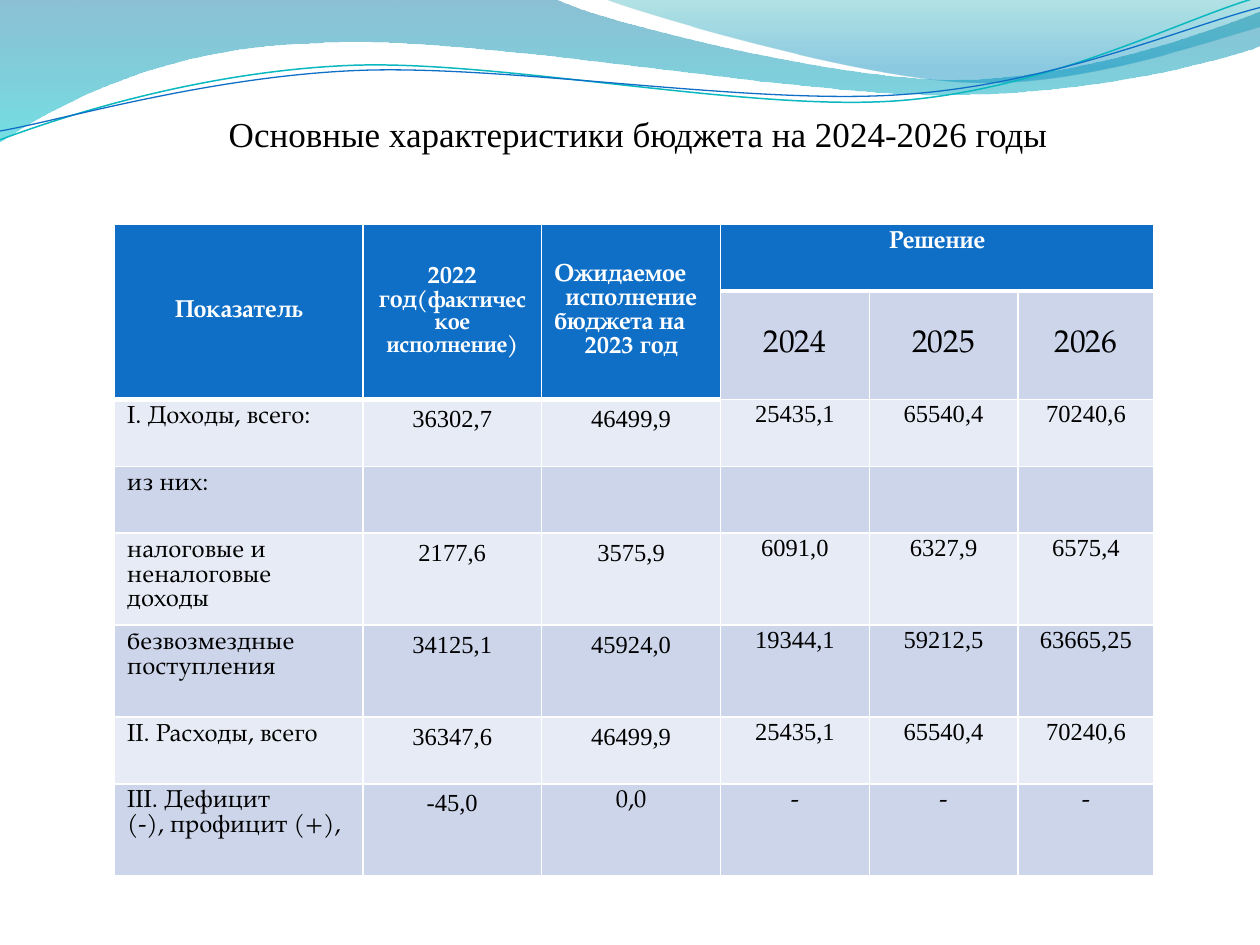
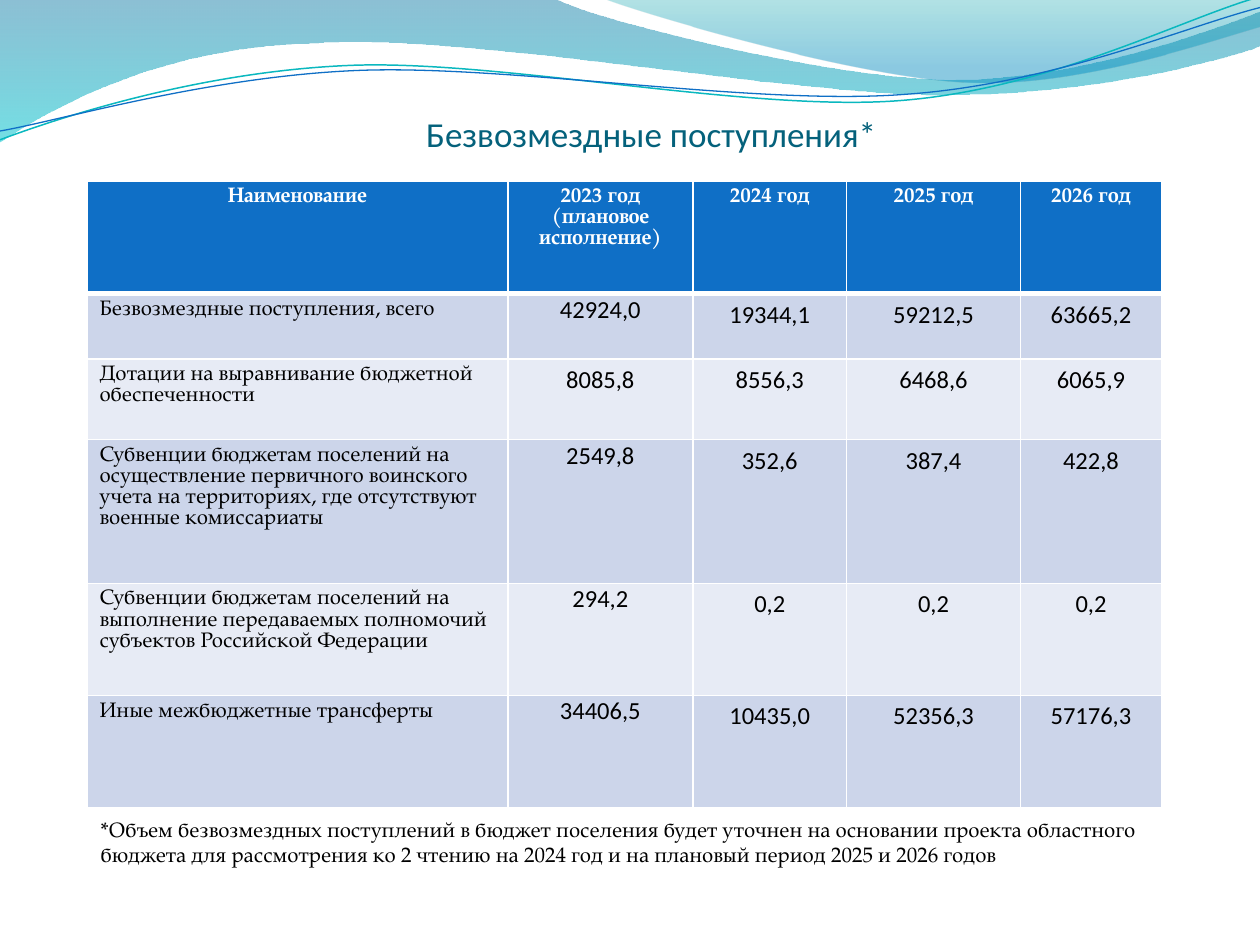
from lxml import etree
from pptx import Presentation
from pptx import util as u
from pptx.dml.color import RGBColor
from pptx.enum import text
from pptx.oxml import ns

PX = 9144  # EMU in one px, 100 px to the inch
SERIF, TIMES, SANS = "TeX Gyre Pagella", "Times New Roman", "Calibri"
BLACK, WHITE, BLUE, TEAL = "000000", "FFFFFF", "0F6FC6", "04617B"
DARK_BAND, LIGHT_BAND = "CCD5EA", "E7EBF5"
LEFT, CENTER = text.PP_ALIGN.LEFT, text.PP_ALIGN.CENTER
TOP, MIDDLE, BOTTOM = (text.MSO_ANCHOR.TOP, text.MSO_ANCHOR.MIDDLE,
                       text.MSO_ANCHOR.BOTTOM)
TIGHT = (1, 1, 1, 0)


def px(*lengths):
    return [round(length * PX) for length in lengths]


def rgb(color):
    return RGBColor.from_string(color)


# Text
def add_run(paragraph, words, size=14, font=SERIF, color=BLACK, bold=False):
    run = paragraph.add_run()
    run.text = words
    run.font.size = u.Pt(size)
    run.font.name = font
    run.font.bold = bold
    run.font.color.rgb = rgb(color)


def write(frame, words, align=LEFT, **run_format):
    for index, line in enumerate(words.split("\n")):
        paragraph = frame.add_paragraph() if index else frame.paragraphs[0]
        paragraph.alignment = align
        paragraph.line_spacing = 1.0
        add_run(paragraph, line, **run_format)


def set_margins(target, margins):
    (target.margin_left, target.margin_top,
     target.margin_right, target.margin_bottom) = px(*margins)


def place_title(slide, box, words, **run_format):
    title = slide.shapes.title
    title.left, title.top, title.width, title.height = px(*box)
    frame = title.text_frame
    frame.auto_size = text.MSO_AUTO_SIZE.NONE
    frame.vertical_anchor = BOTTOM
    set_margins(frame, (0, 5, 0, 0))
    write(frame, words, align=CENTER, size=20, **run_format)


# Waves at the top, shared through the layout
def bend(segment, controls, origin):
    """Turn a straight step of an outline into a curve with the same end."""
    curve = etree.Element(ns.qn("a:cubicBezTo"))
    for point in (controls[:2], controls[2:]):
        x, y = (value - start for value, start in zip(px(*point), origin))
        etree.SubElement(curve, ns.qn("a:pt"), x=str(x), y=str(y))
    curve.append(segment[0])
    segment.getparent().replace(segment, curve)


def add_wave(slide, outline, closed):
    """Two numbers make a straight step, six make a curve."""
    start, *steps = outline
    builder = slide.shapes.build_freeform(*px(*start))
    builder.add_line_segments([px(*step[-2:]) for step in steps], close=closed)
    wave = builder.convert_to_shape()
    wave.shadow.inherit = False
    segments = list(wave.element.iter(ns.qn("a:lnTo")))
    for segment, step in zip(segments, steps):
        if len(step) == 6:
            bend(segment, step[:4], (wave.left, wave.top))
    return wave


def add_band(slide, outline, stops):
    band = add_wave(slide, outline, closed=True)
    band.line.fill.background()
    band.fill.gradient()
    band.fill.gradient_angle = 270
    for stop, (position, color, opacity) in zip(band.fill.gradient_stops, stops):
        stop.position = position
        stop.color.rgb = rgb(color)
    for element, stop in zip(band.element.iter(ns.qn("a:srgbClr")), stops):
        etree.SubElement(element, ns.qn("a:alpha"), val=str(stop[2] * 1000))
    return band


def add_strand(slide, outline, color, width):
    strand = add_wave(slide, outline, closed=False)
    strand.fill.background()
    strand.line.color.rgb = rgb(color)
    strand.line.width = u.Pt(width)
    return strand


def decorate_layout(layout, slide):
    """Draw the waves on a slide, then move them to its layout."""
    waves = [
        add_band(slide, [
            (0, 0), (440, -1), (476, 17, 664, 63, 758, 63),
            (853, 63, 958, 26, 1000, 9), (1001, 36),
            (983, 44, 870, 76, 746, 75), (622, 75, 382, 28, 257, 34),
            (129, 36, 46, 83, -1, 113), (0, 0)],
            [(0, "0074A1", 45), (1, "00C6CF", 55)]),
        add_band(slide, [
            (479, -1), (509, 11, 682, 62, 769, 65),
            (856, 69, 961, 32, 1000, 21), (1000, 0), (479, -1)],
            [(0, "00A1A9", 30), (0.8, "008BBF", 45)]),
        add_strand(slide, [
            (0, 111), (48, 93, 158, 57, 277, 52), (395, 47, 593, 89, 713, 80),
            (833, 71, 938, 15, 998, -2)], "0AB8BF", 0.85),
        add_strand(slide, [
            (0, 104), (47, 96, 164, 61, 283, 56), (403, 51, 597, 84, 717, 75),
            (836, 67, 941, 21, 1000, 6)], BLUE, 0.75),
    ]
    for placeholder in list(layout.placeholders)[1:]:
        layout.shapes.element.remove(placeholder.element)
    for wave in waves:
        layout.shapes.element.append(wave.element)


# Tables
def set_borders(cell, bottom):
    properties = cell._tc.get_or_add_tcPr()
    for side, width in (("L", 1), ("R", 1), ("T", 1), ("B", bottom)):
        line = etree.SubElement(properties, ns.qn("a:ln" + side),
                                w=str(u.Pt(width)))
        fill = etree.SubElement(line, ns.qn("a:solidFill"))
        etree.SubElement(fill, ns.qn("a:srgbClr"), val=WHITE)


def add_grid(slide, left, top, widths, heights):
    frame = slide.shapes.add_table(len(heights), len(widths),
                                   *px(left, top, sum(widths), sum(heights)))
    table = frame.table
    table.first_row = table.horz_banding = False
    for column, width in zip(table.columns, px(*widths)):
        column.width = width
    for row, height in zip(table.rows, px(*heights)):
        row.height = height
    return table


def fill_cell(cell, words, fill, anchor=TOP, margins=None, bottom=1,
              **text_format):
    set_borders(cell, bottom)
    cell.fill.solid()
    cell.fill.fore_color.rgb = rgb(fill)
    cell.vertical_anchor = anchor
    if margins:
        set_margins(cell, margins)
    if words:
        write(cell.text_frame, words, **text_format)


HEADER = dict(fill=BLUE, bottom=3, align=CENTER, color=WHITE, bold=True)


def add_budget_table(slide, left, top):
    table = add_grid(slide, left, top, [197, 142, 142, 118, 118, 108],
                     [53, 86, 53, 53, 73, 73, 53, 73])
    # Two-level header
    headings = ["Показатель", "2022 год\nисполнение)",
                "Ожидаемое\nисполнение\nбюджета на\n2023 год"]
    for column, heading in enumerate(headings):
        table.cell(0, column).merge(table.cell(1, column))
        fill_cell(table.cell(0, column), heading, anchor=MIDDLE, **HEADER)
        fill_cell(table.cell(1, column), "", **HEADER)
    actual = table.cell(0, 1).text_frame.paragraphs
    add_run(actual[0], "(фактическое", size=13, color=WHITE, bold=True)
    actual[1].runs[0].font.size = u.Pt(13)
    for paragraph in table.cell(0, 2).text_frame.paragraphs[::2]:
        paragraph.alignment = LEFT

    table.cell(0, 3).merge(table.cell(0, 5))
    for column, year in enumerate(("2024", "2025", "2026"), 3):
        fill_cell(table.cell(0, column), "Решение" if column == 3 else "",
                  **HEADER)
        fill_cell(table.cell(1, column), year, DARK_BAND, anchor=MIDDLE,
                  align=CENTER, size=18)

    # Indicators
    rows = [
        ("I. Доходы, всего:",
         "36302,7", "46499,9", "25435,1", "65540,4", "70240,6"),
        ("из них:", "", "", "", "", ""),
        ("налоговые и\nненалоговые доходы",
         "2177,6", "3575,9", "6091,0", "6327,9", "6575,4"),
        ("безвозмездные\nпоступления",
         "34125,1", "45924,0", "19344,1", "59212,5", "63665,25"),
        ("II. Расходы, всего",
         "36347,6", "46499,9", "25435,1", "65540,4", "70240,6"),
        ("III. Дефицит\n(-), профицит (+),", "-45,0", "0,0", "-", "-", "-"),
    ]
    for row, values in enumerate(rows, 2):
        fill = DARK_BAND if row % 2 else LIGHT_BAND
        is_balance = row == len(rows) + 1
        for column, value in enumerate(values):
            serif = column == 0 or is_balance and column > 1
            fill_cell(table.cell(row, column), value, fill,
                      margins=TIGHT if column > 2 and not serif else None,
                      font=SERIF if serif else TIMES,
                      align=CENTER if column else LEFT)


def add_transfers_table(slide, left, top):
    table = add_grid(slide, left, top, [334, 147, 122, 138, 112],
                     [89, 52, 64, 114, 89, 89])
    headings = ["Наименование", "2023 год (плановое исполнение)",
                "2024 год", "2025 год", "2026 год"]
    for column, heading in enumerate(headings):
        fill_cell(table.cell(0, column), heading, size=12, **HEADER)

    rows = [
        ("Безвозмездные поступления, всего",
         "42924,0", "19344,1", "59212,5", "63665,2"),
        ("Дотации на выравнивание бюджетной обеспеченности",
         "8085,8", "8556,3", "6468,6", "6065,9"),
        ("Субвенции бюджетам поселений на осуществление первичного воинского "
         "учета на территориях, где отсутствуют военные комиссариаты",
         "2549,8", "352,6", "387,4", "422,8"),
        ("Субвенции бюджетам поселений на выполнение передаваемых полномочий "
         "субъектов Российской Федерации", "294,2", "0,2", "0,2", "0,2"),
        ("Иные межбюджетные трансферты",
         "34406,5", "10435,0", "52356,3", "57176,3"),
    ]
    for row, (name, *values) in enumerate(rows, 1):
        fill = DARK_BAND if row % 2 else LIGHT_BAND
        fill_cell(table.cell(row, 0), name, fill, size=12)
        for column, value in enumerate(values, 1):
            tight = column == 1 and row != 2
            fill_cell(table.cell(row, column), value, fill, font=SANS,
                      margins=TIGHT if tight else None, align=CENTER)


def add_footnote(slide, box):
    frame = slide.shapes.add_textbox(*px(*box)).text_frame
    frame.word_wrap = True
    write(frame, "*Объем безвозмездных поступлений в бюджет поселения будет "
          "уточнен на основании проекта областного\nбюджета для рассмотрения "
          "ко 2 чтению на 2024 год и на плановый период 2025 и 2026 годов",
          size=12)


def main():
    presentation = Presentation()
    presentation.slide_width, presentation.slide_height = px(1000, 750)
    layout = presentation.slide_layouts[5]

    budget = presentation.slides.add_slide(layout)
    decorate_layout(layout, budget)
    place_title(budget, (35, 52, 950, 71),
                "Основные характеристики бюджета на 2024-2026 годы ",
                font=TIMES)
    add_budget_table(budget, 91, 178)

    transfers = presentation.slides.add_slide(layout)
    place_title(transfers, (146, 76, 742, 47), "Безвозмездные поступления*",
                font=SANS, color=TEAL)
    add_transfers_table(transfers, 69, 144)
    add_footnote(transfers, (70, 643, 866, 50))

    presentation.save("out.pptx")


if __name__ == "__main__":
    main()
